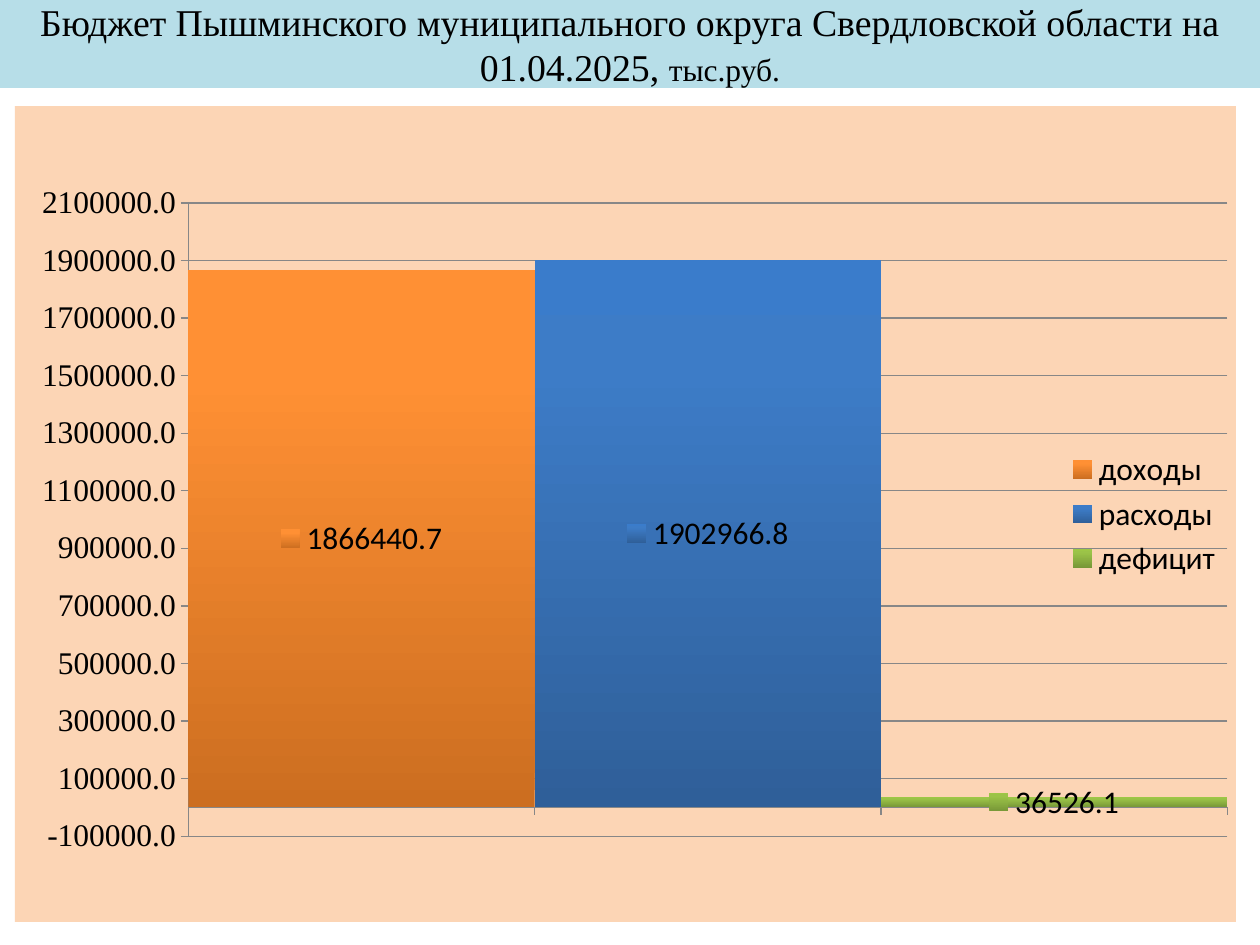
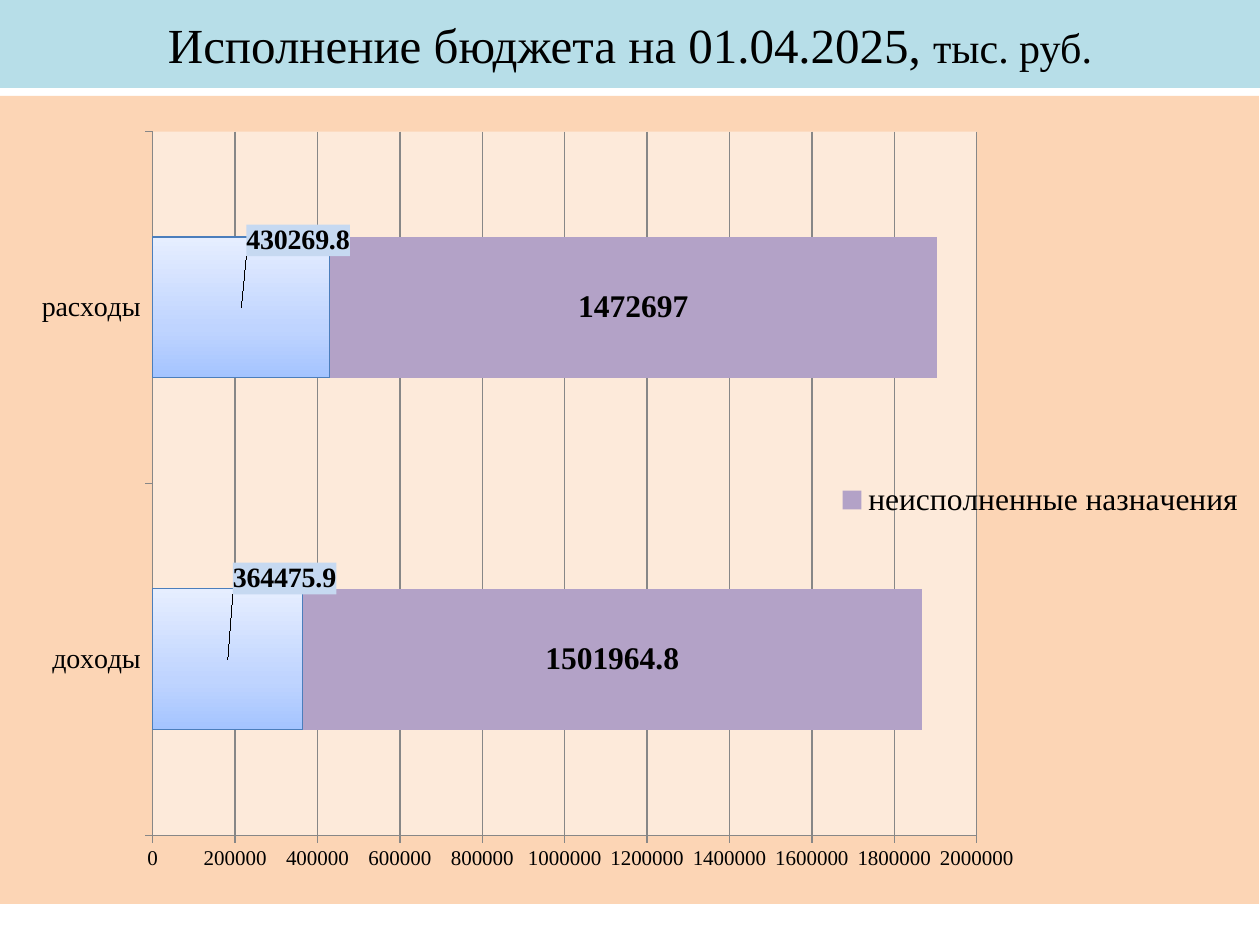
from copy import deepcopy

from lxml import etree
from pptx import Presentation, util as u
from pptx.chart.data import CategoryChartData
from pptx.dml.color import RGBColor
from pptx.enum import chart as ch, text
from pptx.oxml.ns import nsdecls, qn

PX = 914400 / 126
SERIF, SANS = "Times New Roman", "Calibri"
COLOURS = {"band": "B7DEE8", "panel": "FCD5B5", "plot": "FDEADA", "text": "000000",
           "grid": "878787", "done_line": "4B7EBC", "done_label": "C6D9F1",
           "remaining": "B3A2C7"}

# Content
BUDGET = {
    "title": [("Бюджет Пышминского муниципального округа Свердловской области на 01.04.2025, ", 21.6),
              ("тыс.руб.", 18)],
    "type": ch.XL_CHART_TYPE.COLUMN_CLUSTERED,
    "box": (15, 106, 1221, 816),
    "plot": (0.142, 0.119, 0.851, 0.776),
    "categories": ["доходы", "расходы", "дефицит"],
    "series": [("Бюджет", [1866440.7, 1902966.8, 36526.1])],
    "axis_size": 18,
}
EXECUTION = {
    "title": [("Исполнение бюджета на 01.04.2025, ", 28), ("тыс. руб.", 24)],
    "type": ch.XL_CHART_TYPE.BAR_STACKED,
    "box": (-1, 96, 1260, 808),
    "plot": (0.122, 0.044, 0.654, 0.871),
    "categories": ["доходы", "расходы"],
    "series": [("исполнено", [364475.9, 430269.8]),
               ("неисполненные назначения", [1501964.8, 1472697])],
    "axis_size": 12,
}
# Gradient stops run from bottom to top
BUDGET_GRADIENTS = [
    [(0, "CC6E20"), (0.8, "FF9034"), (1, "FF9136")],
    [(0, "2F5F99"), (0.8, "3D7CC7"), (1, "3A7CCB")],
    [(0, "779737"), (0.8, "9BC348"), (1, "9DC746")],
]
DONE_GRADIENT = [(0, "A4C4FF"), (0.35, "BFD4FF"), (1, "E6EEFF")]
DONE_LABEL_SHIFTS = [(0.045, -0.1), (0.045, -0.083)]


def rgb(name):
    return RGBColor.from_string(COLOURS.get(name, name))


def set_font(font, size, face=SERIF, bold=False):
    font.size, font.name, font.bold = u.Pt(size), face, bold
    font.color.rgb = rgb("text")


def set_line(line, name):
    line.color.rgb = rgb(name)
    line.width = u.Pt(0.75)


def set_gradient(fill, stops, chart):
    fill.gradient()
    fill.gradient_angle = 90
    stop_list = list(chart.element.iter(qn("a:gsLst")))[-1]
    stop_list.append(deepcopy(stop_list[-1]))
    for stop, (position, colour) in zip(fill.gradient_stops, stops):
        stop.position = position
        stop.color.rgb = rgb(colour)


def area_fill(name):
    return etree.fromstring(
        f'<c:spPr {nsdecls("c", "a")}><a:solidFill><a:srgbClr val="{COLOURS[name]}"/>'
        '</a:solidFill><a:ln><a:noFill/></a:ln></c:spPr>')


def manual_layout(**values):
    parts = "".join(f'<c:{tag} val="{value}"/>' for tag, value in values.items())
    return etree.fromstring(
        f'<c:layout {nsdecls("c")}><c:manualLayout>{parts}</c:manualLayout></c:layout>')


def add_title(slide, runs):
    title = slide.shapes.title
    title.left, title.top, title.width, title.height = (round(n * PX) for n in (0, 0, 1260, 88))
    title.fill.solid()
    title.fill.fore_color.rgb = rgb("band")
    frame = title.text_frame
    frame.auto_size = text.MSO_AUTO_SIZE.NONE
    frame.vertical_anchor = text.MSO_ANCHOR.MIDDLE
    paragraph = frame.paragraphs[0]
    paragraph.alignment = text.PP_ALIGN.CENTER
    for words, size in runs:
        run = paragraph.add_run()
        run.text = words
        set_font(run.font, size)


def add_chart_slide(deck, content):
    slide = deck.slides.add_slide(deck.slide_layouts[5])
    add_title(slide, content["title"])
    data = CategoryChartData()
    data.categories = content["categories"]
    for name, values in content["series"]:
        data.add_series(name, values)
    box = [round(n * PX) for n in content["box"]]
    chart = slide.shapes.add_chart(content["type"], *box, data).chart
    chart.has_title = False
    set_font(chart.font, 18, SANS)

    # Panel and plot area
    chart.element.find(qn("c:chart")).addnext(area_fill("panel"))
    plot_area = next(chart.element.iter(qn("c:plotArea")))
    for layout in plot_area.findall(qn("c:layout")):
        plot_area.remove(layout)
    x, y, w, h = content["plot"]
    plot_area.insert(0, manual_layout(layoutTarget="inner", xMode="edge", yMode="edge",
                                      x=x, y=y, w=w, h=h))

    # Axes and legend
    for axis in (chart.category_axis, chart.value_axis):
        axis.major_tick_mark = ch.XL_TICK_MARK.OUTSIDE
        axis.minor_tick_mark = ch.XL_TICK_MARK.NONE
        set_line(axis.format.line, "grid")
    chart.value_axis.major_unit = 200000
    chart.value_axis.has_major_gridlines = True
    set_line(chart.value_axis.major_gridlines.format.line, "grid")
    set_font(chart.value_axis.tick_labels.font, content["axis_size"])
    chart.has_legend = True
    chart.legend.position = ch.XL_LEGEND_POSITION.RIGHT
    return chart, plot_area


def build_budget(deck):
    chart, _ = add_chart_slide(deck, BUDGET)
    plot = chart.plots[0]
    plot.vary_by_categories = True
    plot.gap_width, plot.overlap = 0, 1
    chart.legend.include_in_layout = True
    set_font(chart.legend.font, 18, SANS)
    chart.category_axis.tick_label_position = ch.XL_TICK_LABEL_POSITION.NONE
    amounts = chart.value_axis
    amounts.minimum_scale, amounts.maximum_scale = -100000, 2100000
    amounts.tick_labels.number_format = "0.0"
    amounts.tick_labels.number_format_is_linked = False

    budget = plot.series[0]
    for index, stops in enumerate(BUDGET_GRADIENTS):
        set_gradient(budget.points[index].format.fill, stops, chart)
    labels = budget.data_labels
    labels.show_value = labels.show_legend_key = True
    labels.position = ch.XL_LABEL_POSITION.CENTER
    labels.number_format, labels.number_format_is_linked = "0.0", False
    set_font(labels.font, 18, SANS)


def build_execution(deck):
    chart, plot_area = add_chart_slide(deck, EXECUTION)
    plot_area.append(area_fill("plot"))
    plot = chart.plots[0]
    plot.vary_by_categories = False
    plot.gap_width, plot.overlap = 150, 100
    chart.value_axis.minimum_scale, chart.value_axis.maximum_scale = 0, 2000000
    set_font(chart.category_axis.tick_labels.font, 16)

    # Only the executed part is named in the legend
    chart.legend.include_in_layout = False
    set_font(chart.legend.font, 18)
    next(chart.element.iter(qn("c:legendPos"))).addnext(etree.fromstring(
        f'<c:legendEntry {nsdecls("c")}><c:idx val="1"/><c:delete val="1"/></c:legendEntry>'))

    done, remaining = plot.series
    set_gradient(done.format.fill, DONE_GRADIENT, chart)
    set_line(done.format.line, "done_line")
    remaining.format.fill.solid()
    remaining.format.fill.fore_color.rgb = rgb("remaining")
    for series, size in ((done, 16), (remaining, 18)):
        series.data_labels.show_value = True
        set_font(series.data_labels.font, size, bold=True)

    # Executed amounts sit on tinted tags above their bars
    for index in range(len(DONE_LABEL_SHIFTS)):
        set_font(done.points[index].data_label.font, 16, bold=True)
    for label, (x, y) in zip(chart.element.iter(qn("c:dLbl")), DONE_LABEL_SHIFTS):
        label.find(qn("c:idx")).addnext(manual_layout(x=x, y=y))
        label.find(qn("c:txPr")).addprevious(area_fill("done_label"))


def main():
    deck = Presentation()
    deck.slide_width, deck.slide_height = u.Inches(10), u.Inches(7.5)
    build_budget(deck)
    build_execution(deck)
    deck.save("out.pptx")


if __name__ == "__main__":
    main()
